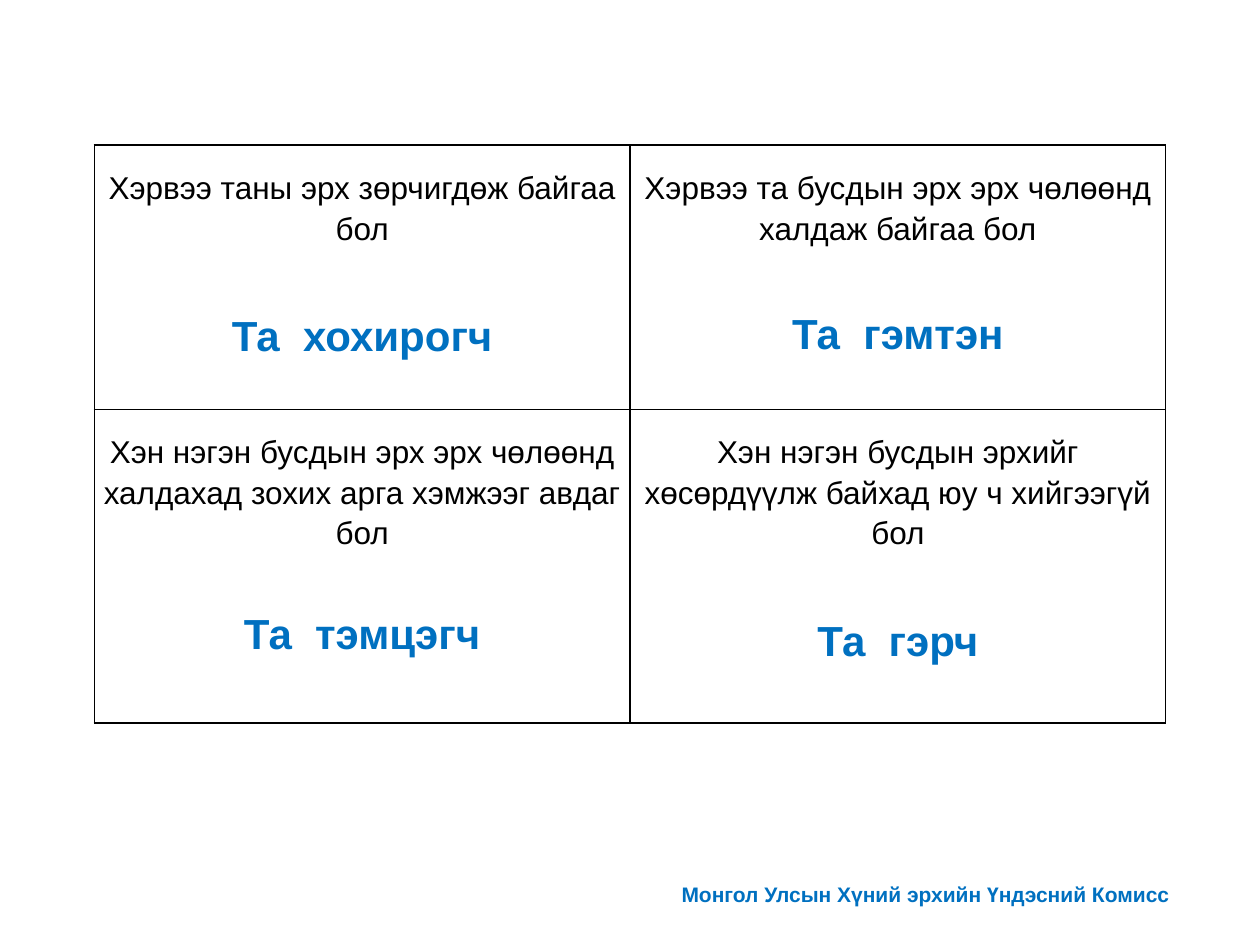
"""Build a slide with a four-cell table of roles in human rights situations."""
from dataclasses import dataclass

from lxml import etree
from pptx import Presentation
from pptx.dml.color import RGBColor
from pptx.enum.text import MSO_ANCHOR, MSO_AUTO_SIZE, PP_ALIGN
from pptx.oxml.ns import qn
from pptx.slide import Slide
from pptx.util import Cm, Pt

CENTER = PP_ALIGN.CENTER
JUSTIFY = PP_ALIGN.JUSTIFY
TOP = MSO_ANCHOR.TOP
FIT_SHAPE = MSO_AUTO_SIZE.SHAPE_TO_FIT_TEXT
BLANK_LAYOUT = 6

ROLES = [
    [
        ("Хэрвээ таны эрх зөрчигдөж байгаа бол", "Та  хохирогч", 34),
        ("Хэрвээ та бусдын эрх эрх чөлөөнд халдаж байгаа бол", "Та  гэмтэн", 33),
    ],
    [
        ("Хэн нэгэн бусдын эрх эрх чөлөөнд халдахад зохих арга хэмжээг авдаг бол",
         "Та  тэмцэгч", 30),
        ("Хэн нэгэн бусдын эрхийг хөсөрдүүлж байхад юу ч хийгээгүй бол",
         "Та  гэрч", 34),
    ],
]


def color(value):
    return RGBColor.from_string(value)


@dataclass
class Page:
    slide: Slide
    font: str = "Arial"
    ink: str = "000000"
    accent: str = "0070C0"

    def add_span(self, para, text, size, value, bold=False):
        span = para.add_run()
        span.text = text
        span.font.name = self.font
        span.font.size = Pt(size)
        span.font.bold = bold
        span.font.color.rgb = color(value)

    def add_footer(self, text, left, top, width, height):
        box = self.slide.shapes.add_textbox(Cm(left), Cm(top), Cm(width), Cm(height))
        frame = box.text_frame
        frame.word_wrap = True
        frame.auto_size = FIT_SHAPE
        para = frame.paragraphs[0]
        para.alignment = JUSTIFY
        self.add_span(para, text, 12, self.accent, bold=True)

    def add_borders(self, cell):
        properties = cell._tc.get_or_add_tcPr()
        for side in ("a:lnL", "a:lnR", "a:lnT", "a:lnB"):
            line = etree.SubElement(properties, qn(side), w=str(Pt(1)))
            fill = etree.SubElement(line, qn("a:solidFill"))
            etree.SubElement(fill, qn("a:srgbClr"), val=self.ink)

    def fill_cell(self, cell, condition, role, gap):
        self.add_borders(cell)
        cell.fill.background()
        cell.vertical_anchor = TOP
        cell.margin_left = cell.margin_right = Cm(0.18)
        cell.margin_top = Cm(0.42)
        cell.margin_bottom = 0
        frame = cell.text_frame
        first, second = frame.paragraphs[0], frame.add_paragraph()
        for para in (first, second):
            para.alignment = CENTER
            para.line_spacing = 1.15
        second.space_before = Pt(gap)
        self.add_span(first, condition, 18, self.ink)
        self.add_span(second, role, 24, self.accent, bold=True)

    def add_roles(self, rows, left, top, column_width, heights):
        columns = len(rows[0])
        table = self.slide.shapes.add_table(
            len(rows), columns, Cm(left), Cm(top),
            Cm(column_width * columns), Cm(sum(heights))).table
        table.first_row = False
        table.horz_banding = False
        for column in table.columns:
            column.width = Cm(column_width)
        for row, height, entries in zip(table.rows, heights, rows):
            row.height = Cm(height)
            for cell, entry in zip(row.cells, entries):
                self.fill_cell(cell, *entry)


def main():
    deck = Presentation()
    deck.slide_width = Cm(25.4)
    deck.slide_height = Cm(19.05)
    page = Page(deck.slides.add_slide(deck.slide_layouts[BLANK_LAYOUT]))
    page.add_footer("Монгол Улсын Хүний эрхийн Үндэсний Комисс", 13.49, 17.65, 10.72, 0.76)
    page.add_roles(ROLES, 1.9, 2.92, 10.8, (5.33, 6.32))
    deck.save("out.pptx")


if __name__ == "__main__":
    main()
